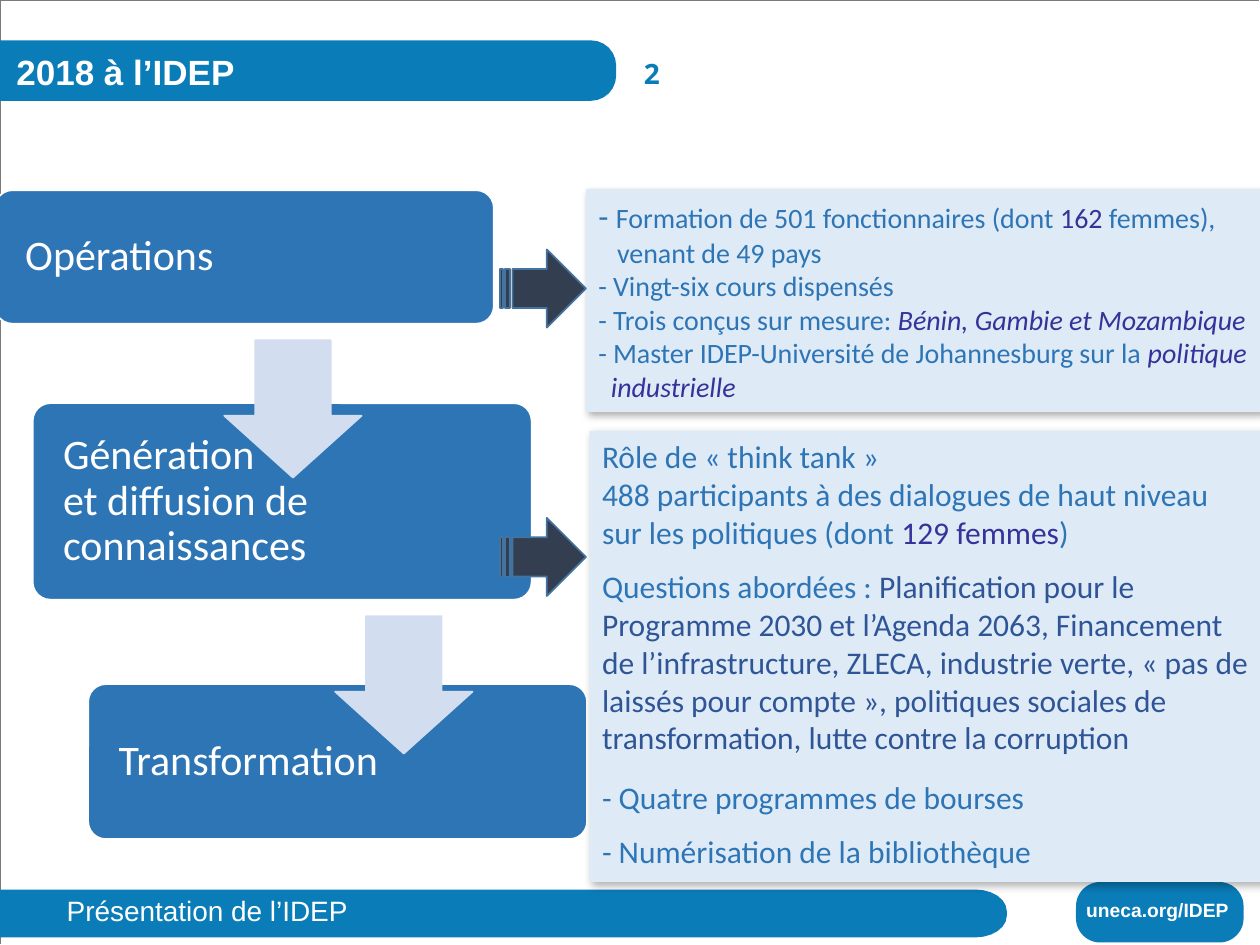
import math
from dataclasses import dataclass

import lxml.etree
import pptx
import pptx.dml.color
import pptx.enum.shapes
import pptx.enum.text
import pptx.oxml.ns
import pptx.util

Inches = pptx.util.Inches
Pt = pptx.util.Pt
Shapes = pptx.enum.shapes.MSO_SHAPE
Anchor = pptx.enum.text.MSO_ANCHOR
qn = pptx.oxml.ns.qn

BRAND = "0A7CB8"
BLUE = "2E75B6"
INDIGO = "333399"
NAVY = "2F5597"
WHITE = "FFFFFF"
PALE_ARROW = "D2DEEF"


@dataclass
class Area:
    left: float
    top: float
    width: float
    height: float

    def lengths(self):
        return [Inches(v) for v in (self.left, self.top, self.width, self.height)]


@dataclass
class Span:
    text: str
    color: str | None = None
    italic: bool | None = None
    size: float | None = None


@dataclass
class Para:
    spans: list[Span]
    size: float
    color: str = WHITE
    font: str = "Calibri"
    bold: bool = False
    before: float = 0
    hanging: float = 0
    line_spacing: float = 1.0


@dataclass
class Step:
    area: Area
    text: str


@dataclass
class Card:
    area: Area
    paras: list[Para]


def rgb(value: str):
    return pptx.dml.color.RGBColor.from_string(value)


def paint(shape, fill: str, line: str | None = None):
    shape.shadow.inherit = False
    shape.fill.solid()
    shape.fill.fore_color.rgb = rgb(fill)
    if line:
        shape.line.color.rgb = rgb(line)
        shape.line.width = Pt(1)
    else:
        shape.line.fill.background()


def add_soft_shadow(shape):
    effects = shape._element.spPr.find(qn("a:effectLst"))
    shadow = lxml.etree.SubElement(
        effects, qn("a:outerShdw"), blurRad=str(Pt(4.5)), dist=str(Pt(2.6)),
        dir=str(53 * 60000), algn="tl", rotWithShape="0")
    color = lxml.etree.SubElement(shadow, qn("a:srgbClr"), val="000000")
    lxml.etree.SubElement(color, qn("a:alpha"), val="30000")


def write(box, paras: list[Para], insets=(0, 0, 0, 0), anchor=Anchor.TOP):
    frame = box.text_frame
    frame.word_wrap = True
    frame.vertical_anchor = anchor
    (frame.margin_left, frame.margin_top,
     frame.margin_right, frame.margin_bottom) = [Inches(v) for v in insets]
    for index, para in enumerate(paras):
        paragraph = frame.add_paragraph() if index else frame.paragraphs[0]
        paragraph.alignment = pptx.enum.text.PP_ALIGN.LEFT
        paragraph.line_spacing = para.line_spacing
        if para.before:
            paragraph.space_before = Pt(para.before)
        if para.hanging:
            properties = paragraph._p.get_or_add_pPr()
            properties.set("marL", str(Inches(para.hanging)))
            properties.set("indent", str(-Inches(para.hanging)))
        paragraph.font.name = para.font
        paragraph.font.size = Pt(para.size)
        paragraph.font.bold = para.bold
        paragraph.font.color.rgb = rgb(para.color)
        for span in para.spans:
            for number, line in enumerate(span.text.split("\n")):
                if number:
                    paragraph.add_line_break()
                run = paragraph.add_run()
                run.text = line
                if span.color:
                    run.font.color.rgb = rgb(span.color)
                if span.italic:
                    run.font.italic = True
                if span.size:
                    run.font.size = Pt(span.size)


def add_preset(page, kind, area: Area, fill: str, line: str | None = None,
               adjustments=()):
    shape = page.shapes.add_shape(kind, *area.lengths())
    for index, value in enumerate(adjustments):
        shape.adjustments[index] = value
    paint(shape, fill, line)
    return shape


def add_label(page, area: Area, text: str, size: float, color: str = WHITE,
              font: str = "Arial", bold: bool = False):
    box = page.shapes.add_textbox(*area.lengths())
    write(box, [Para([Span(text)], size, color, font, bold)], (0.01, 0, 0, 0))


def add_outline(page, points: list[tuple[float, float]], close: bool):
    lengths = [(Inches(x), Inches(y)) for x, y in points]
    builder = page.shapes.build_freeform(*lengths[0])
    builder.add_line_segments(lengths[1:], close=close)
    return builder.convert_to_shape()


def add_bar(page, area: Area, radius_x: float, radius_y: float):
    right, bottom = area.left + area.width, area.top + area.height
    points = [(area.left, bottom), (area.left, area.top)]
    for start, center_y in ((-90, area.top + radius_y), (0, bottom - radius_y)):
        for step in range(7):
            angle = math.radians(start + 15 * step)
            points.append((right - radius_x + radius_x * math.cos(angle),
                           center_y + radius_y * math.sin(angle)))
    paint(add_outline(page, points, True), BRAND)


def add_step(page, step: Step):
    box = add_preset(page, Shapes.ROUNDED_RECTANGLE, step.area, BLUE, WHITE,
                     (0.14 / step.area.height,))
    write(box, [Para([Span(step.text)], 24, line_spacing=0.9)],
          (0.2, 0.1, 1.45, 0.1), Anchor.MIDDLE)


def add_card(page, card: Card):
    box = add_preset(page, Shapes.RECTANGLE, card.area, "DEEBF7")
    add_soft_shadow(box)
    write(box, card.paras, (0.1, 0.05, 0.1, 0.05))


STEPS = [
    Step(Area(-0.04, 1.51, 3.96, 1.06), "Opérations"),
    Step(Area(0.26, 3.2, 3.96, 1.56), "Génération\net diffusion de connaissances"),
    Step(Area(0.7, 5.43, 3.96, 1.23), "Transformation"),
]

CARDS = [
    Card(Area(4.65, 1.5, 5.37, 1.77), [
        Para([Span("- ", size=19), Span("Formation de 501 fonctionnaires (dont "),
              Span("162", INDIGO), Span(" femmes),\nvenant de 49 pays")],
             16, BLUE, hanging=0.15),
        Para([Span("- Vingt-six cours dispensés")], 16, BLUE),
        Para([Span("- Trois conçus sur mesure: "),
              Span("Bénin, Gambie et Mozambique", INDIGO, True)], 16, BLUE),
        Para([Span("- Master IDEP-Université de Johannesburg sur la"),
              Span(" politique\nindustrielle", INDIGO, True)], 16, BLUE, hanging=0.1),
    ]),
    Card(Area(4.68, 3.42, 5.37, 3.58), [
        Para([Span("Rôle de « think tank »")], 18, BLUE),
        Para([Span("488 participants à des dialogues de haut niveau sur les politiques (dont "),
              Span("129 femmes", INDIGO), Span(")")], 18, BLUE),
        Para([Span("Questions abordées : "),
              Span("Planification pour le Programme 2030 et l’Agenda 2063, Financement de "
                   "l’infrastructure, ZLECA, industrie verte, « pas de laissés pour compte », "
                   "politiques sociales de transformation, lutte contre la corruption", NAVY)],
             18, BLUE, before=9.5),
        Para([Span("- Quatre programmes de bourses")], 18, BLUE, before=12.5),
        Para([Span("- Numérisation de la bibliothèque")], 18, BLUE, before=9.5),
    ]),
]


def main():
    deck = pptx.Presentation()
    deck.slide_width, deck.slide_height = Inches(10), Inches(7.5)
    page = deck.slides.add_slide(deck.slide_layouts[6])

    border = add_outline(page, [(0, 7.49), (0, 0), (9.99, 0)], False)
    paint(border, WHITE, "7B7B7B")
    border.fill.background()
    border.line.width = Pt(0.25)

    add_bar(page, Area(0, 0.32, 4.89, 0.48), 0.2, 0.2)
    add_label(page, Area(0.12, 0.4, 2.79, 0.34), "2018 à l’IDEP", 20, bold=True)
    add_label(page, Area(5.1, 0.45, 0.61, 0.27), "2", 16, BRAND, "Open Sans", True)

    for step in STEPS:
        add_step(page, step)
    for left, top in ((1.78, 2.7), (2.66, 4.89)):
        add_preset(page, Shapes.DOWN_ARROW, Area(left, top, 1.09, 1.09),
                   PALE_ARROW, PALE_ARROW, (0.55, 0.45))

    add_bar(page, Area(0, 7.06, 7.99, 0.38), 0.25, 0.17)
    add_label(page, Area(0.52, 7.09, 7.4, 0.27), "Présentation de l’IDEP", 16)
    add_preset(page, Shapes.ROUNDED_RECTANGLE, Area(8.54, 7, 1.33, 0.48), BRAND,
               adjustments=(0.4,))
    add_label(page, Area(8.61, 7.13, 1.18, 0.19), "uneca.org/IDEP", 11, bold=True)

    for card in CARDS:
        add_card(page, card)
    for top in (1.98, 4.11):
        add_preset(page, Shapes.STRIPED_RIGHT_ARROW, Area(3.97, top, 0.68, 0.62),
                   "333F50", "43739E")

    deck.save("out.pptx")


if __name__ == "__main__":
    main()
